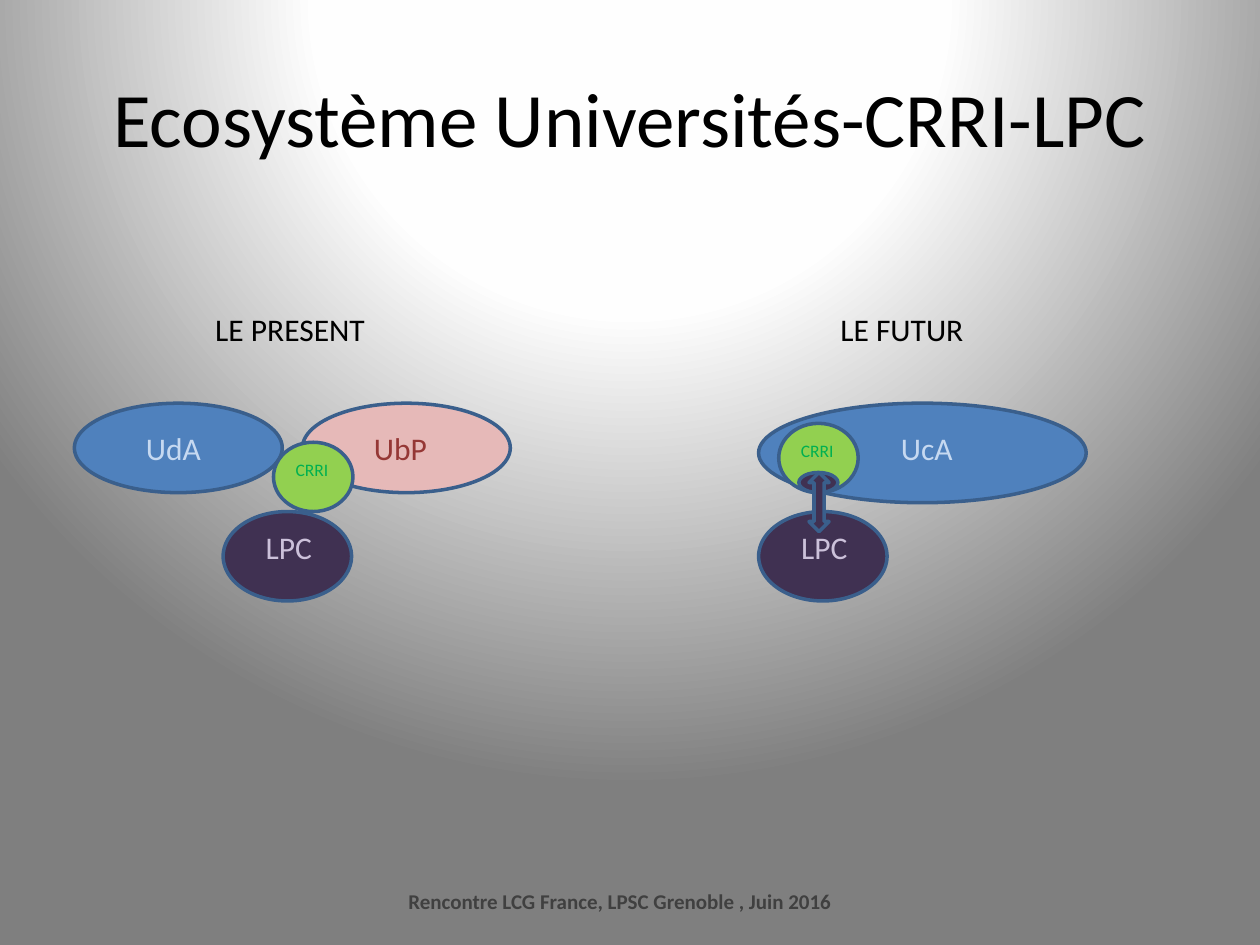
from pptx import Presentation
from pptx.dml.color import RGBColor
from pptx.enum.shapes import MSO_SHAPE
from pptx.enum.text import MSO_ANCHOR, PP_ALIGN
from pptx.oxml import parse_xml
from pptx.oxml.ns import nsdecls
from pptx.util import Pt

ELLIPSE, UP_DOWN_ARROW = MSO_SHAPE.OVAL, MSO_SHAPE.UP_DOWN_ARROW
TOP, MIDDLE = MSO_ANCHOR.TOP, MSO_ANCHOR.MIDDLE
LEFT, CENTER = PP_ALIGN.LEFT, PP_ALIGN.CENTER
TITLE_ONLY = 5

FONT = "Calibri"
BLUE, PINK, GREEN, PURPLE, OUTLINE = "4F81BD", "E6B9B8", "92D050", "403152", "3A5F8C"
LIGHT_BLUE, RED, DARK_GREEN, LILAC = "C6D9F1", "953735", "00B050", "CCC1DA"
BLACK, GRAY = "000000", "404040"
BACKGROUND_STOPS = ((0, "FFFFFF"), (40, "FEFEFE"), (100, "7F7F7F"))


def color(hex_string):
    return RGBColor.from_string(hex_string)


def place(shape, left, top, width, height):
    shape.left, shape.top = Pt(left), Pt(top)
    shape.width, shape.height = Pt(width), Pt(height)


def write(shape, text, size=18, text_color=BLACK, bold=False, align=LEFT, anchor=TOP):
    frame = shape.text_frame
    frame.word_wrap = True
    frame.vertical_anchor = anchor
    paragraph = frame.paragraphs[0]
    paragraph.alignment = align
    run = paragraph.add_run()
    run.text = text
    run.font.name, run.font.size, run.font.bold = FONT, Pt(size), bold
    run.font.color.rgb = color(text_color)


def add_text(slide, text, left, top, width, height=28.8, **text_format):
    box = slide.shapes.add_textbox(Pt(left), Pt(top), Pt(width), Pt(height))
    write(box, text, **text_format)


def add_figure(slide, kind, fill, left, top, width, height):
    shape = slide.shapes.add_shape(kind, Pt(left), Pt(top), Pt(width), Pt(height))
    shape.shadow.inherit = False
    shape.fill.solid()
    shape.fill.fore_color.rgb = color(fill)
    shape.line.color.rgb = color(OUTLINE)
    shape.line.width = Pt(2)


def add_university(slide, name, left, top, width=118.8, height=51.1, fill=BLUE,
                   text_color=LIGHT_BLUE, label_indent=33.8, label_width=56.9):
    add_figure(slide, ELLIPSE, fill, left, top, width, height)
    add_text(slide, name, left + label_indent, top + 11.5, label_width, text_color=text_color)


def add_crri(slide, left, top):
    add_figure(slide, ELLIPSE, GREEN, left, top, 45.4, 39.6)
    add_text(slide, "CRRI", left + 5.6, top + 5.8, 33.8, 19.4, size=10, text_color=DARK_GREEN)


def add_lpc(slide, left, top):
    add_figure(slide, ELLIPSE, PURPLE, left, top, 73.4, 51.1)
    add_text(slide, "LPC", left + 17.3, top + 5.8, 45.4, text_color=LILAC)


def add_present(slide, left, top):
    add_text(slide, "LE PRESENT", left + 73.4, top, 130.3)
    add_university(slide, "UdA", left, top + 56.9)
    add_university(slide, "UbP", left + 130.3, top + 56.9, fill=PINK, text_color=RED)
    add_lpc(slide, left + 85, top + 118.8)
    add_crri(slide, left + 113.8, top + 79.2)


def add_future(slide, left, top):
    add_text(slide, "LE FUTUR", left + 39.6, top, 130.3)
    add_university(slide, "UcA", left, top + 56.9, width=187.2, height=56.9,
                   label_indent=74.2, label_width=45.4)
    add_crri(slide, left + 11.5, top + 68.4)
    add_lpc(slide, left, top + 118.8)
    add_figure(slide, ELLIPSE, PURPLE, left + 23, top + 96.5, 22.3, 11.5)
    add_figure(slide, UP_DOWN_ARROW, PURPLE, left + 28.8, top + 96.5, 11.5, 33.8)


def set_background(slide):
    stops = "".join(
        f'<a:gs pos="{position * 1000}"><a:srgbClr val="{value}"/></a:gs>'
        for position, value in BACKGROUND_STOPS
    )
    background = parse_xml(
        f'<p:bg {nsdecls("p", "a")}><p:bgPr><a:gradFill rotWithShape="1">'
        f'<a:gsLst>{stops}</a:gsLst><a:path path="circle">'
        '<a:fillToRect l="50000" t="-80000" r="50000" b="180000"/></a:path>'
        '</a:gradFill><a:effectLst/></p:bgPr></p:bg>'
    )
    slide.element.cSld.insert(0, background)


def main():
    presentation = Presentation()
    presentation.slide_width, presentation.slide_height = Pt(720), Pt(540)
    slide = presentation.slides.add_slide(presentation.slide_layouts[TITLE_ONLY])
    set_background(slide)
    title = slide.shapes.title
    place(title, 36, 21.6, 648, 90)
    write(title, "Ecosystème Universités-CRRI-LPC", size=44, align=CENTER, anchor=MIDDLE)
    add_present(slide, 42.5, 173.5)
    add_future(slide, 433.5, 173.5)
    add_text(slide, "Rencontre LCG France, LPSC Grenoble , Juin 2016", 212.4, 500.4, 283.7,
             size=12, text_color=GRAY, bold=True, align=CENTER, anchor=MIDDLE)
    presentation.save("out.pptx")


if __name__ == "__main__":
    main()
